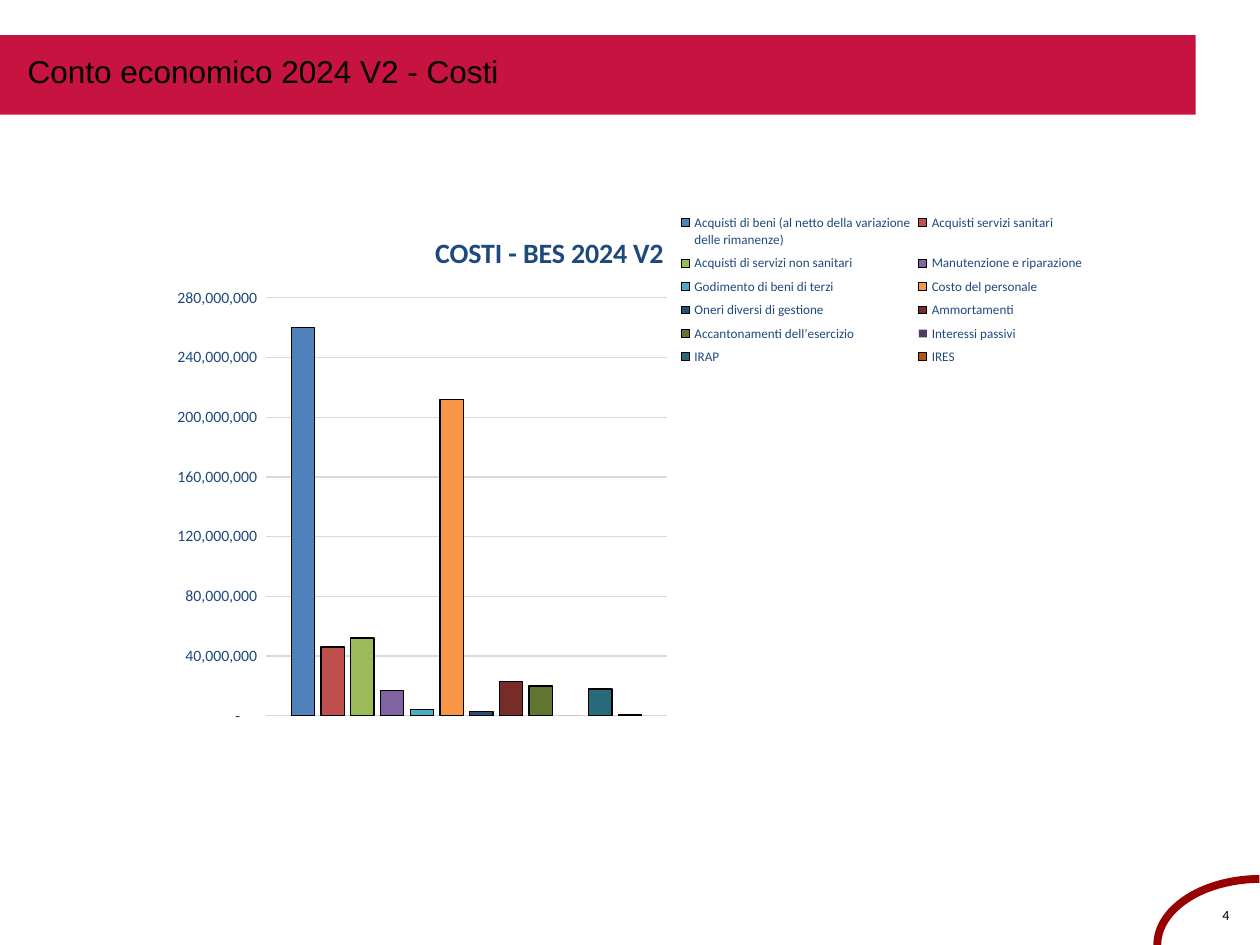
"""Build the slide on the costs of the 2024 V2 income statement."""
import lxml.etree
import pptx
import pptx.chart.data
import pptx.dml.color
import pptx.enum.chart
import pptx.enum.shapes
import pptx.enum.text
import pptx.oxml.ns
import pptx.util

Inches = pptx.util.Inches
Pt = pptx.util.Pt
RGBColor = pptx.dml.color.RGBColor
qn = pptx.oxml.ns.qn

BLACK = RGBColor(0x00, 0x00, 0x00)
CRIMSON = RGBColor(0xC6, 0x13, 0x3F)
DARK_RED = RGBColor(0x99, 0x00, 0x00)
NAVY = RGBColor(0x1F, 0x49, 0x7D)
GRID_GREY = RGBColor(0xD9, 0xD9, 0xD9)

COSTS = [
    ("Acquisti di beni (al netto della variazione\ndelle rimanenze)", 260_000_000, RGBColor(0x4F, 0x81, 0xBD)),
    ("Acquisti servizi sanitari", 46_000_000, RGBColor(0xC0, 0x50, 0x4D)),
    ("Acquisti di servizi non sanitari", 52_000_000, RGBColor(0x9B, 0xBB, 0x59)),
    ("Manutenzione e riparazione", 17_000_000, RGBColor(0x80, 0x64, 0xA2)),
    ("Godimento di beni di terzi", 4_000_000, RGBColor(0x4B, 0xAC, 0xC6)),
    ("Costo del personale", 212_000_000, RGBColor(0xF7, 0x96, 0x46)),
    ("Oneri diversi di gestione", 3_000_000, RGBColor(0x2C, 0x4D, 0x75)),
    ("Ammortamenti", 23_000_000, RGBColor(0x77, 0x2C, 0x2A)),
    ("Accantonamenti dell’esercizio", 20_000_000, RGBColor(0x5F, 0x75, 0x30)),
    ("Interessi passivi", 0, RGBColor(0x4D, 0x3B, 0x62)),
    ("IRAP", 18_000_000, RGBColor(0x27, 0x6A, 0x7C)),
    ("IRES", 1_000_000, RGBColor(0xB6, 0x57, 0x08)),
]


def style_font(font, name, size, color, bold=False):
    """Set the typeface, size, colour and weight of a font."""
    font.name = name
    font.size = Pt(size)
    font.color.rgb = color
    font.bold = bold


def add_banner(slide):
    """Add the coloured band behind the title."""
    banner = slide.shapes.add_shape(
        pptx.enum.shapes.MSO_SHAPE.RECTANGLE, Inches(0), Inches(0.28), Inches(9.49), Inches(0.63))
    banner.shadow.inherit = False
    banner.fill.solid()
    banner.fill.fore_color.rgb = CRIMSON
    banner.line.fill.background()


def set_title(slide, text):
    """Fill the title placeholder and bring it in front of the banner."""
    title = slide.shapes.title
    title.left, title.top = Inches(0.12), Inches(0.36)
    title.width, title.height = Inches(6.38), Inches(0.71)
    frame = title.text_frame
    frame.text = text
    frame.vertical_anchor = pptx.enum.text.MSO_ANCHOR.TOP
    paragraph = frame.paragraphs[0]
    paragraph.alignment = pptx.enum.text.PP_ALIGN.LEFT
    style_font(paragraph.runs[0].font, "Arial", 18, BLACK)
    title.element.getparent().append(title.element)


def add_corner_arc(slide):
    """Add the arc around the page number."""
    arc = slide.shapes.add_shape(
        pptx.enum.shapes.MSO_SHAPE.ARC, Inches(9.48), Inches(6.68), Inches(1.05), Inches(1.64))
    arc.rotation = 270
    arc.adjustments[1] = 215.34
    arc.shadow.inherit = False
    arc.fill.background()
    arc.line.color.rgb = DARK_RED
    arc.line.width = Pt(4.5)


def add_page_number(slide, number):
    """Add the page number in the lower right corner."""
    box = slide.shapes.add_textbox(Inches(9.57), Inches(7.18), Inches(0.32), Inches(0.16))
    frame = box.text_frame
    frame.word_wrap = True
    frame.margin_left = frame.margin_right = frame.margin_bottom = 0
    frame.margin_top = Inches(0.03)
    frame.text = number
    paragraph = frame.paragraphs[0]
    paragraph.alignment = pptx.enum.text.PP_ALIGN.CENTER
    paragraph.line_spacing = 0.93
    style_font(paragraph.runs[0].font, "Calibri", 8, BLACK)


def place_part(part, index, **fractions):
    """Give a chart part a manual layout in fractions of the chart."""
    for old in part.findall(qn("c:layout")):
        part.remove(old)
    layout = lxml.etree.Element(qn("c:layout"))
    manual = lxml.etree.SubElement(layout, qn("c:manualLayout"))
    settings = {"xMode": "edge", "yMode": "edge", **fractions}
    if part.tag == qn("c:plotArea"):
        settings = {"layoutTarget": "inner", **settings}
    for name, value in settings.items():
        lxml.etree.SubElement(manual, qn(f"c:{name}")).set("val", str(value))
    part.insert(index, layout)


def style_value_axis(axis):
    """Set the scale, gridlines and labels of the value axis."""
    axis.minimum_scale = 0
    axis.maximum_scale = 280_000_000
    axis.major_unit = 40_000_000
    axis.major_tick_mark = pptx.enum.chart.XL_TICK_MARK.NONE
    axis.minor_tick_mark = pptx.enum.chart.XL_TICK_MARK.NONE
    axis.format.line.fill.background()
    axis.major_gridlines.format.line.color.rgb = GRID_GREY
    axis.major_gridlines.format.line.width = Pt(0.75)
    axis.tick_labels.number_format = r'_ * #,##0_ ;_ * \-#,##0_ ;_ * "-"??_ ;_ '
    axis.tick_labels.number_format_is_linked = False
    style_font(axis.tick_labels.font, "Calibri", 9, NAVY)


def style_columns(plot):
    """Colour the columns and outline those with a value."""
    plot.vary_by_categories = False
    plot.gap_width = 219
    plot.overlap = -27
    for series, (_, value, color) in zip(plot.series, COSTS):
        series.format.fill.solid()
        series.format.fill.fore_color.rgb = color
        if value:
            series.format.line.color.rgb = BLACK
            series.format.line.width = Pt(0.75)
        else:
            series.format.line.fill.background()


def add_cost_chart(slide):
    """Add the column chart with one series for each cost."""
    data = pptx.chart.data.CategoryChartData()
    data.categories = ["1"]
    for name, value, _ in COSTS:
        data.add_series(name, [value])
    chart = slide.shapes.add_chart(
        pptx.enum.chart.XL_CHART_TYPE.COLUMN_CLUSTERED,
        Inches(1.38), Inches(1.65), Inches(7.25), Inches(4.2), data).chart
    style_font(chart.font, "Calibri", 9, NAVY)
    style_columns(chart.plots[0])
    chart.category_axis.visible = False
    style_value_axis(chart.value_axis)

    chart.has_title = True
    title_frame = chart.chart_title.text_frame
    title_frame.text = "COSTI - BES 2024 V2"
    style_font(title_frame.paragraphs[0].runs[0].font, "Calibri", 16, NAVY, bold=True)

    chart.has_legend = True
    chart.legend.position = pptx.enum.chart.XL_LEGEND_POSITION.CORNER
    chart.legend.include_in_layout = False
    style_font(chart.legend.font, "Calibri", 7.5, NAVY)

    body = chart.element.find(qn("c:chart"))
    place_part(body.find(qn("c:title")), 1, x=0.28, y=0.04)
    place_part(body.find(qn("c:plotArea")), 0, x=0.1, y=0.17, w=0.44, h=0.79)
    place_part(body.find(qn("c:legend")), 1, x=0.55, y=0, w=0.45, h=0.31)


def main():
    """Build and save the presentation."""
    presentation = pptx.Presentation()
    presentation.slide_width, presentation.slide_height = Inches(10), Inches(7.5)
    slide = presentation.slides.add_slide(presentation.slide_layouts[5])
    add_corner_arc(slide)
    add_page_number(slide, "4")
    add_banner(slide)
    set_title(slide, "Conto economico 2024 V2 - Costi")
    add_cost_chart(slide)
    presentation.save("out.pptx")


if __name__ == "__main__":
    main()
